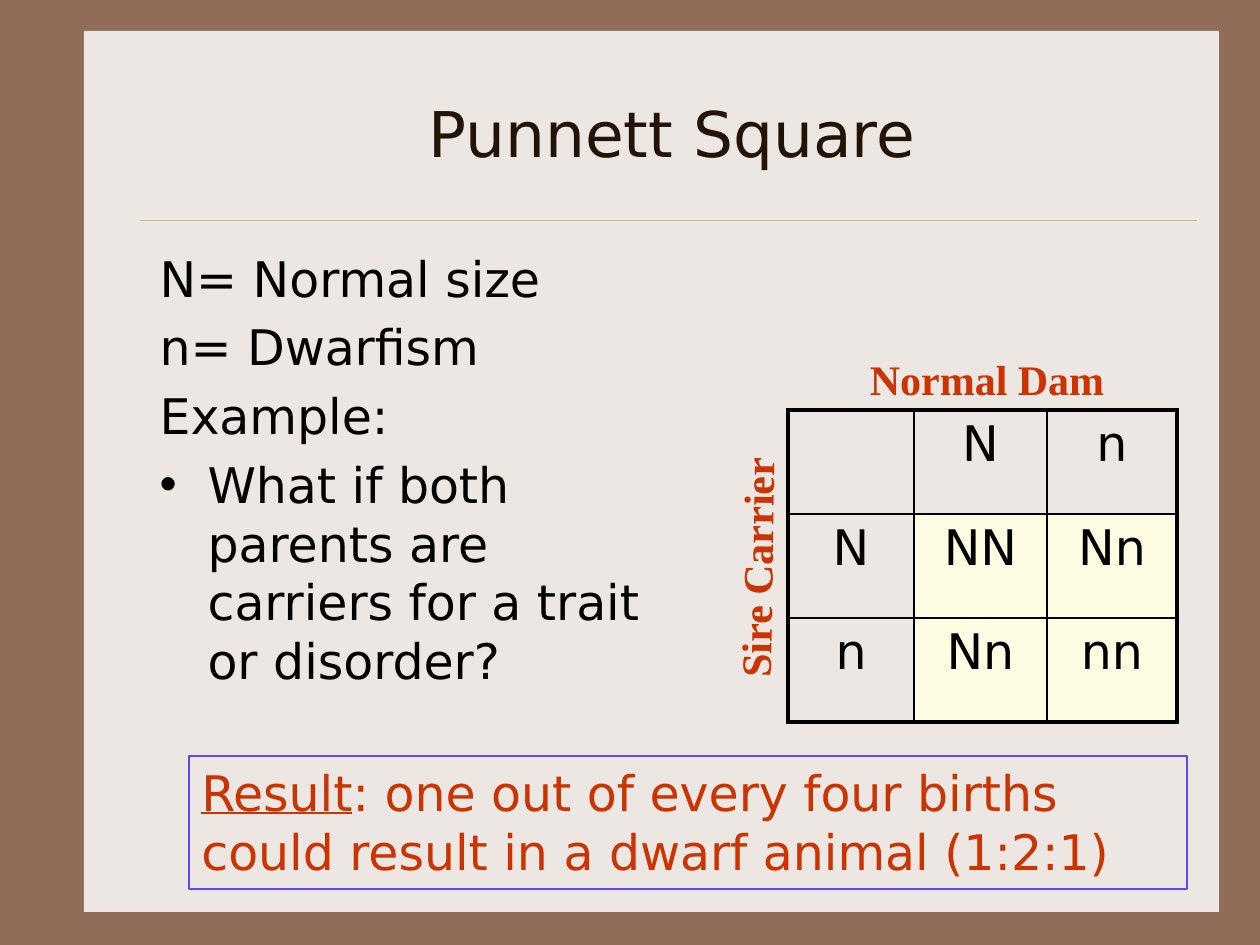
from dataclasses import dataclass

from lxml.etree import SubElement
from pptx import Presentation
from pptx.dml.color import RGBColor
from pptx.enum.shapes import MSO_CONNECTOR, MSO_SHAPE
from pptx.enum.text import MSO_ANCHOR, MSO_AUTO_SIZE, PP_ALIGN
from pptx.oxml.ns import qn
from pptx.slide import Slide
from pptx.util import Emu, Pt


def px(length):
    return Emu(round(length * 914400 / 126))


def rgb(value):
    return RGBColor.from_string(value)


@dataclass
class SlideBuilder:
    """Style of the lesson and the slide being drawn."""

    slide: Slide
    sans: str = "DejaVu Sans"
    serif: str = "Times New Roman"
    ink: str = "000000"
    title_ink: str = "221304"
    accent: str = "CC3300"
    frame: str = "906D58"
    paper: str = "EDE7E3"
    rule_ink: str = "CBBD83"
    offspring: str = "FEFDE3"
    result_edge: str = "6047F5"

    def background(self):
        fill = self.slide.background.fill
        fill.solid()
        fill.fore_color.rgb = rgb(self.frame)

    def format(self, paragraph, size, color, face=None, bold=False, align=PP_ALIGN.LEFT):
        paragraph.alignment = align
        paragraph.space_before = Pt(0)
        for run in paragraph.runs:
            run.font.size = Pt(size)
            run.font.name = face or self.sans
            run.font.bold = bold
            run.font.color.rgb = rgb(color)

    def rectangle(self, left, top, width, height, fill=None, edge=None):
        box = self.slide.shapes.add_shape(
            MSO_SHAPE.RECTANGLE, px(left), px(top), px(width), px(height))
        box.shadow.inherit = False
        if fill:
            box.fill.solid()
            box.fill.fore_color.rgb = rgb(fill)
        else:
            box.fill.background()
        if edge:
            box.line.color.rgb = rgb(edge)
            box.line.width = Pt(1.5)
        else:
            box.line.fill.background()
        return box

    def rule(self, left, right, top):
        line = self.slide.shapes.add_connector(
            MSO_CONNECTOR.STRAIGHT, px(left), px(top), px(right), px(top))
        line.line.color.rgb = rgb(self.rule_ink)
        line.line.width = Pt(0.25)
        SubElement(line._element.spPr, qn("a:effectLst"))

    def placeholder(self, index, left, top, width, height, text):
        holder = self.slide.placeholders[index]
        holder.left, holder.top = px(left), px(top)
        holder.width, holder.height = px(width), px(height)
        self.slide.shapes._spTree.append(holder._element)
        holder.text_frame.text = text
        holder.text_frame.auto_size = MSO_AUTO_SIZE.NONE
        return holder.text_frame

    def title(self, left, top, width, height, text):
        heading = self.placeholder(0, left, top, width, height, text)
        heading.vertical_anchor = MSO_ANCHOR.MIDDLE
        self.format(heading.paragraphs[0], 36, self.title_ink, align=PP_ALIGN.CENTER)

    def body(self, left, top, width, height, lines, bulleted):
        frame = self.placeholder(1, left, top, width, height, "\n".join(lines))
        for position, paragraph in enumerate(frame.paragraphs):
            properties = paragraph._p.get_or_add_pPr()
            properties.set("marL", str(px(48)))
            properties.set("indent", str(px(-48)))
            if paragraph.text in bulleted:
                SubElement(properties, qn("a:buChar"), char="•")
            else:
                SubElement(properties, qn("a:buNone"))
            self.format(paragraph, 28, self.ink)
            if position:
                paragraph.space_before = Pt(5.6)

    def parent_label(self, left, top, width, height, text, rotation=0):
        label = self.slide.shapes.add_textbox(px(left), px(top), px(width), px(height))
        label.rotation = rotation
        label.text_frame.word_wrap = True
        label.text_frame.text = text
        self.format(label.text_frame.paragraphs[0], 24, self.accent,
                    self.serif, True, PP_ALIGN.CENTER)

    def border(self, cell, side, width):
        edge = SubElement(cell._tc.get_or_add_tcPr(), qn(f"a:ln{side}"), w=str(Pt(width)))
        fill = SubElement(edge, qn("a:solidFill"))
        SubElement(fill, qn("a:srgbClr"), val=self.ink)

    def punnett_square(self, left, top, widths, row_height, genotypes):
        last = len(genotypes) - 1
        square = self.slide.shapes.add_table(
            len(genotypes), len(widths), px(left), px(top),
            px(sum(widths)), px(row_height * len(genotypes))).table
        square.first_row = square.horz_banding = False
        for column, width in zip(square.columns, widths):
            column.width = px(width)
        for r, alleles in enumerate(genotypes):
            square.rows[r].height = px(row_height)
            for c, genotype in enumerate(alleles):
                cell = square.cell(r, c)
                outer = {"L": c == 0, "R": c == last, "T": r == 0, "B": r == last}
                for side, is_outer in outer.items():
                    self.border(cell, side, 2.25 if is_outer else 1)
                if r and c:
                    cell.fill.solid()
                    cell.fill.fore_color.rgb = rgb(self.offspring)
                else:
                    cell.fill.background()
                if genotype:
                    cell.text_frame.text = genotype
                    self.format(cell.text_frame.paragraphs[0], 28, self.ink,
                                align=PP_ALIGN.CENTER)

    def result(self, left, top, width, height, lead, finding):
        frame = self.rectangle(left, top, width, height, edge=self.result_edge).text_frame
        frame.word_wrap = True
        frame.vertical_anchor = MSO_ANCHOR.TOP
        frame.text = lead
        paragraph = frame.paragraphs[0]
        paragraph.add_run().text = finding
        self.format(paragraph, 28, self.accent)
        paragraph.runs[0].font.underline = True


def main():
    deck = Presentation()
    deck.slide_width, deck.slide_height = px(1260), px(945)
    lesson = SlideBuilder(deck.slides.add_slide(deck.slide_layouts[1]))
    lesson.background()
    lesson.rectangle(84, 31, 1135, 881, fill=lesson.paper)
    lesson.rule(140, 1197, 220)
    lesson.title(147, 53, 1050, 158, "Punnett Square")
    question = "What if both parents are carriers for a trait or disorder?"
    lesson.body(147, 242, 514, 567,
                ["N= Normal size", "n= Dwarfism", "Example:", question], [question])
    lesson.punnett_square(788, 410, [126, 133, 130], 104,
                          [["", "N", "n"], ["N", "NN", "Nn"], ["n", "Nn", "nn"]])
    lesson.parent_label(840, 347, 294, 63, "Normal Dam")
    lesson.parent_label(609, 536, 294, 63, "Sire Carrier", rotation=270.9)
    lesson.result(189, 756, 998, 133, "Result",
                  ": one out of every four births could result in a dwarf animal (1:2:1)")
    deck.save("out.pptx")


if __name__ == "__main__":
    main()
